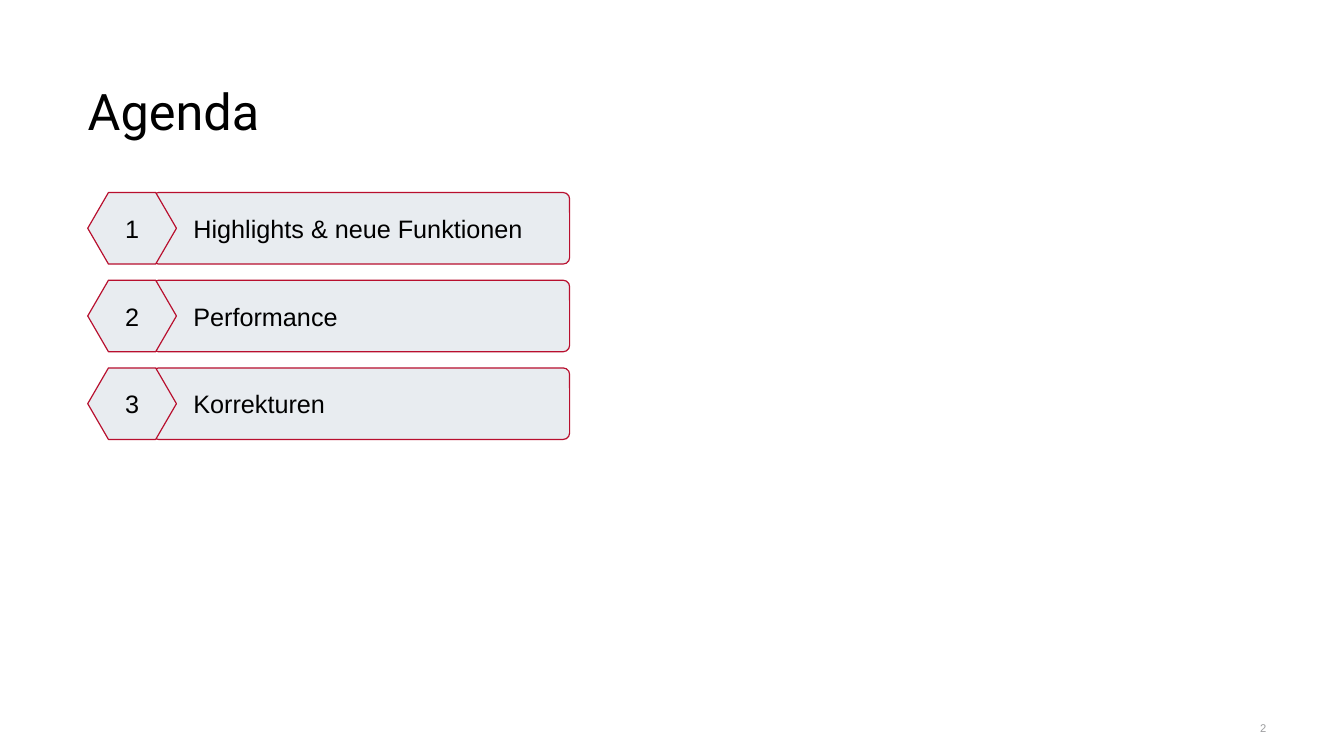
import pptx
import pptx.util
import pptx.dml.color
import pptx.enum.shapes
import pptx.enum.text
from dataclasses import dataclass

Inches, Pt = pptx.util.Inches, pptx.util.Pt
RGB = pptx.dml.color.RGBColor.from_string
SHAPE = pptx.enum.shapes.MSO_SHAPE
ALIGN = pptx.enum.text.PP_ALIGN
ANCHOR = pptx.enum.text.MSO_ANCHOR


@dataclass(frozen=True)
class Theme:
    text: str = "000000"
    fill: str = "E8ECF0"
    line: str = "B80F2E"
    muted: str = "9C9D9F"
    title_font: str = "Roboto"
    body_font: str = "Arial"
    title_size: float = 36
    body_size: float = 18
    number_size: float = 8
    line_width: float = 0.85


THEME = Theme()
ENTRIES = ["Highlights & neue Funktionen", "Performance", "Korrekturen"]


def write(tf, text, size, color, font, align, anchor):
    tf.text = text
    tf.word_wrap = True
    tf.auto_size = pptx.enum.text.MSO_AUTO_SIZE.NONE
    tf.vertical_anchor = anchor
    p = tf.paragraphs[0]
    p.alignment = align
    r = p.runs[0]
    r.font.size = Pt(size)
    r.font.name = font
    r.font.color.rgb = RGB(color)


def add_title(s, text, x, y, w, h):
    sp = s.shapes.title
    sp.left, sp.top, sp.width, sp.height = map(Inches, (x, y, w, h))
    write(sp.text_frame, text, THEME.title_size, THEME.text,
          THEME.title_font, ALIGN.LEFT, ANCHOR.TOP)


def add_panel(shapes, kind, adjustment, text, align, indent, x, y, w, h):
    sp = shapes.add_shape(kind, *map(Inches, (x, y, w, h)))
    sp.adjustments[0] = adjustment
    sp.shadow.inherit = False
    sp.fill.solid()
    sp.fill.fore_color.rgb = RGB(THEME.fill)
    sp.line.color.rgb = RGB(THEME.line)
    sp.line.width = Pt(THEME.line_width)
    tf = sp.text_frame
    tf.margin_left = Inches(indent)
    tf.margin_top = tf.margin_right = tf.margin_bottom = 0
    write(tf, text, THEME.body_size, THEME.text, THEME.body_font,
          align, ANCHOR.MIDDLE)


def add_agenda(s, entries, x, y, w, row_h, pitch):
    hexagon_w, bar_offset = 0.88, 0.64
    for i, entry in enumerate(entries):
        top = y + i * pitch
        shapes = s.shapes.add_group_shape().shapes
        # Bar with the topic, then the numbered hexagon over its left end
        add_panel(shapes, SHAPE.ROUNDED_RECTANGLE, 0.09, entry, ALIGN.LEFT,
                  0.39, x + bar_offset, top, w - bar_offset, row_h)
        add_panel(shapes, SHAPE.HEXAGON, 0.29, str(i + 1), ALIGN.CENTER,
                  0, x, top, hexagon_w, row_h)


def add_page_number(s, text, x, y, w, h):
    sp = s.shapes.add_textbox(*map(Inches, (x, y, w, h)))
    write(sp.text_frame, text, THEME.number_size, THEME.muted,
          THEME.body_font, ALIGN.RIGHT, ANCHOR.MIDDLE)


def main():
    prs = pptx.Presentation()
    prs.slide_width, prs.slide_height = Inches(13.33), Inches(7.5)
    s = prs.slides.add_slide(prs.slide_layouts.get_by_name("Title Only"))
    # Heading
    add_title(s, "Agenda", 0.77, 0.74, 11.84, 0.55)
    # Agenda rows
    add_agenda(s, ENTRIES, 0.87, 1.91, 4.78, 0.71, 0.87)
    # Footer
    add_page_number(s, "2", 12.2, 7.09, 0.46, 0.26)
    prs.save("out.pptx")


if __name__ == "__main__":
    main()
